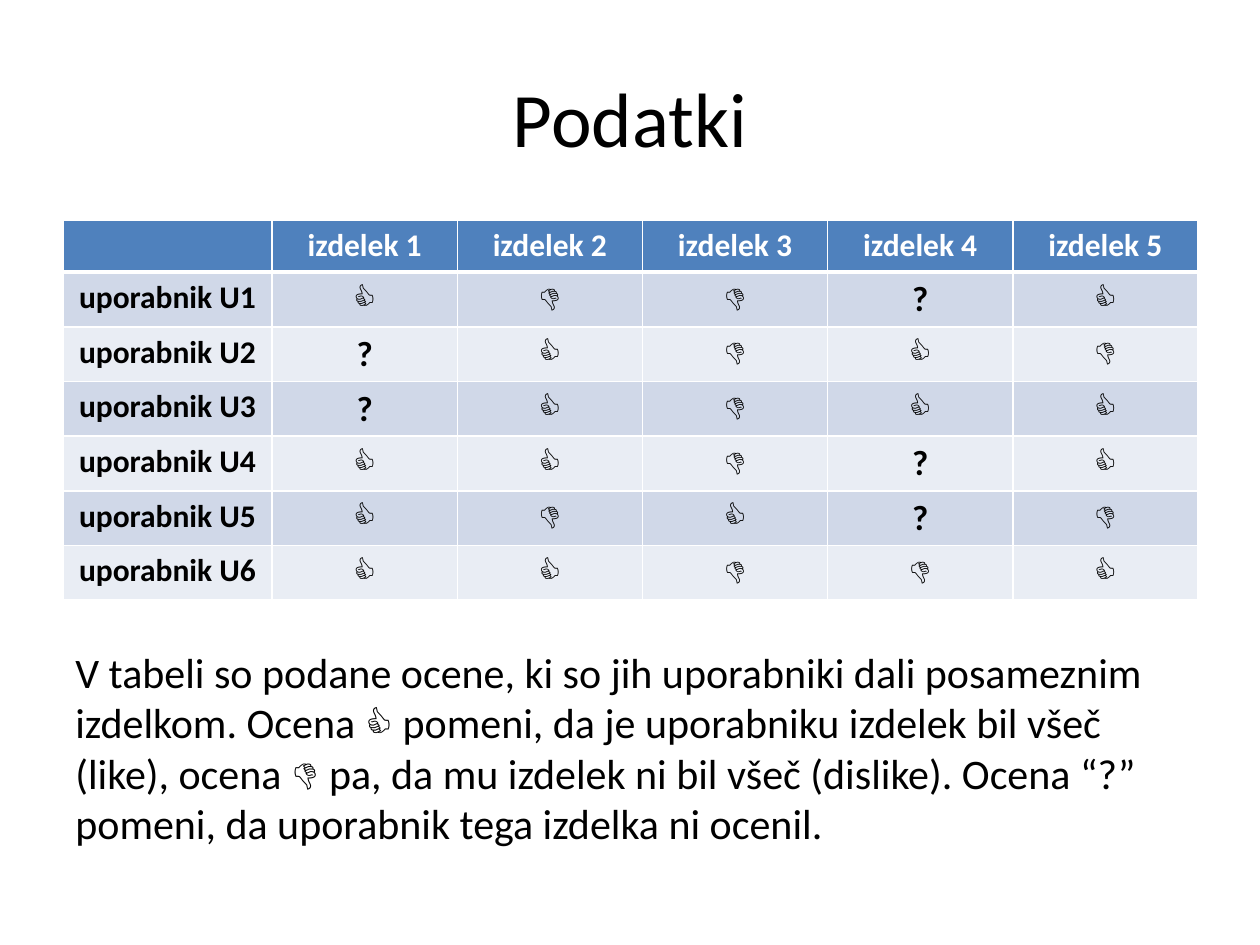
from lxml.etree import SubElement
from pptx import Presentation
from pptx.dml.color import RGBColor
from pptx.enum.text import MSO_ANCHOR, PP_ALIGN
from pptx.oxml.ns import qn
from pptx.util import Inches, Pt

COLORS = {
    "text": "000000",
    "white": "FFFFFF",
    "header": "4F81BD",
    "odd": "D0D8E8",
    "even": "E9EDF4",
}
LIKE, DISLIKE, UNKNOWN = "👍", "👎", "?"
RATINGS = ["👍👎👎?👍", "?👍👎👍👎", "?👍👎👍👍", "👍👍👎?👍", "👍👎👍?👎", "👍👍👎👎👍"]
PRODUCTS = [f"izdelek {number}" for number in range(1, 6)]


def add_span(para, text, size=18, font="Calibri", color="text", bold=False):
    """Append formatted text to a paragraph."""
    span = para.add_run()
    span.text = text
    span.font.size = Pt(size)
    span.font.name = font
    span.font.bold = bold
    span.font.color.rgb = RGBColor.from_string(COLORS[color])


class SlideBuilder:
    """Hold the style and the current slide."""

    def __init__(self, deck):
        """Add a blank page to the deck."""
        self.page = deck.slides.add_slide(deck.slide_layouts[6])
        self.left = Inches(0.5)
        self.width = Inches(9)

    def text(self, top, height, spans, size, align=PP_ALIGN.LEFT, anchor=MSO_ANCHOR.TOP):
        """Add a text box made of (text, format) spans."""
        box = self.page.shapes.add_textbox(self.left, Inches(top), self.width, Inches(height))
        frame = box.text_frame
        frame.word_wrap = True
        frame.vertical_anchor = anchor
        para = frame.paragraphs[0]
        para.alignment = align
        for text, style in spans:
            add_span(para, text, size=size, **style)

    def border(self, cell, bottom=1, top=1):
        """Draw the white lines around a cell."""
        properties = cell._tc.get_or_add_tcPr()
        sides = {"lnL": 1, "lnR": 1, "lnT": top, "lnB": bottom}
        for index, (side, width) in enumerate(sides.items()):
            line = SubElement(properties, qn(f"a:{side}"), w=str(Pt(width)))
            fill = SubElement(line, qn("a:solidFill"))
            SubElement(fill, qn("a:srgbClr"), val=COLORS["white"])
            properties.insert(index, line)

    def cell(self, cell, text, fill, bottom=1, top=1, **style):
        """Fill one table cell with centred bold text."""
        cell.fill.solid()
        cell.fill.fore_color.rgb = RGBColor.from_string(COLORS[fill])
        self.border(cell, bottom, top)
        para = cell.text_frame.paragraphs[0]
        para.alignment = PP_ALIGN.CENTER
        if text:
            add_span(para, text, bold=True, **style)

    def ratings(self, top, row_height):
        """Add the table of ratings by user and product."""
        row_count, column_count = len(RATINGS) + 1, len(PRODUCTS) + 1
        table = self.page.shapes.add_table(
            row_count, column_count, self.left, Inches(top),
            self.width, Inches(row_height * row_count),
        ).table
        for index, column in enumerate(table.columns):
            column.width = Inches(1.47 if index else 1.66)
        for row in table.rows:
            row.height = Inches(row_height)
        for index, product in enumerate(["", *PRODUCTS]):
            self.cell(table.cell(0, index), product, "header", bottom=3, color="white")
        for user, marks in enumerate(RATINGS, 1):
            fill = "odd" if user % 2 else "even"
            top_line = 3 if user == 1 else 1
            self.cell(table.cell(user, 0), f"uporabnik U{user}", fill, top=top_line)
            for index, mark in enumerate(marks, 1):
                font = "Calibri" if mark == UNKNOWN else "Arial"
                self.cell(table.cell(user, index), mark, fill, top=top_line, size=20, font=font)


def main():
    """Build and save the deck."""
    deck = Presentation()
    deck.slide_width, deck.slide_height = Inches(10), Inches(7.5)
    builder = SlideBuilder(deck)
    builder.text(0.3, 1.25, [("Podatki", {})], 44, PP_ALIGN.CENTER, MSO_ANCHOR.MIDDLE)
    builder.ratings(1.75, 0.41)
    builder.text(5.08, 2.02, [
        ("V tabeli so podane ocene, ki so jih uporabniki dali posameznim izdelkom. Ocena ", {}),
        (f"{LIKE} ", {"bold": True}),
        ("pomeni, da je uporabniku izdelek bil všeč (like), ocena ", {}),
        (DISLIKE, {"font": "Arial", "bold": True}),
        (" pa, da mu izdelek ni bil všeč (dislike). Ocena “?” pomeni, "
         "da uporabnik tega izdelka ni ocenil.", {}),
    ], 24)
    deck.save("out.pptx")


if __name__ == "__main__":
    main()
